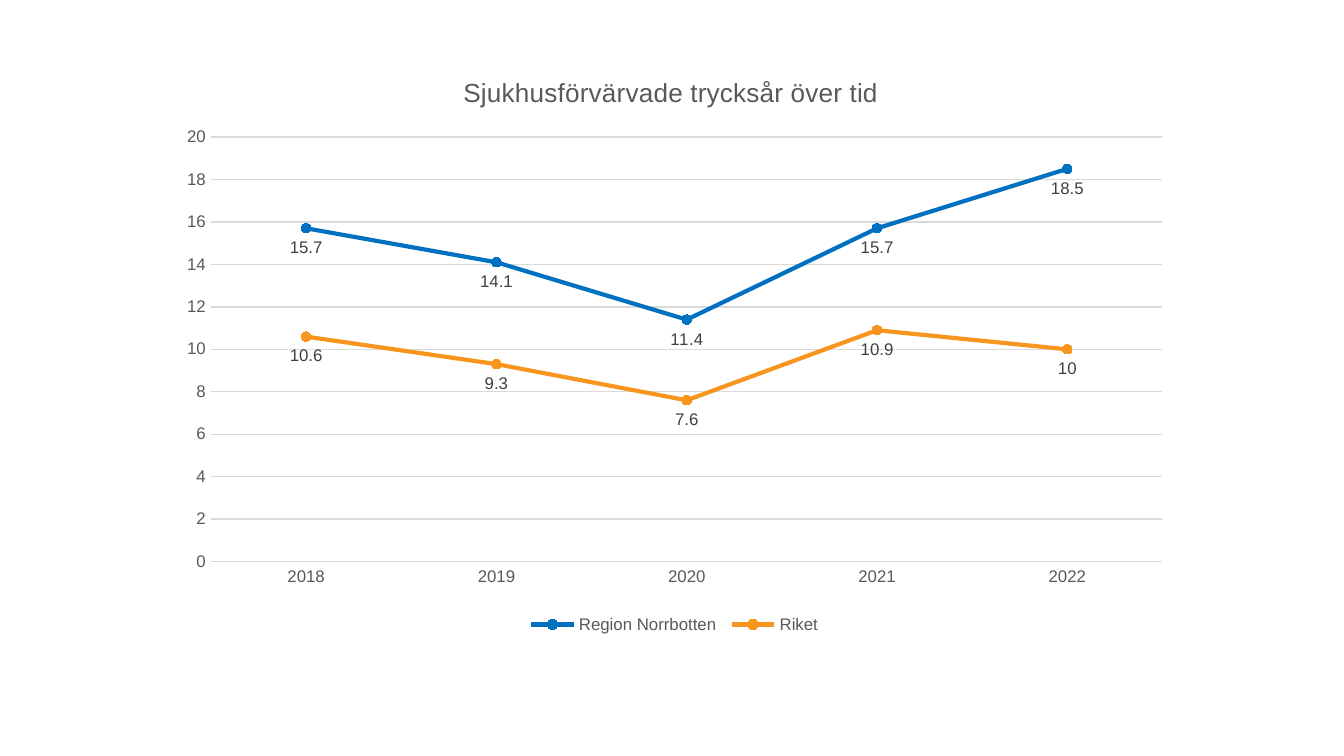
"""Build a slide with a line chart of hospital-acquired pressure ulcers over time."""
from lxml.etree import SubElement
from pptx import Presentation
from pptx.chart.data import CategoryChartData
from pptx.dml.color import RGBColor
from pptx.enum.chart import (XL_CHART_TYPE, XL_LABEL_POSITION, XL_LEGEND_POSITION,
                             XL_MARKER_STYLE, XL_TICK_MARK)
from pptx.oxml.ns import qn
from pptx.util import Inches, Pt

TITLE = "Sjukhusförvärvade trycksår över tid "
YEARS = ["2018", "2019", "2020", "2021", "2022"]
SERIES = [
    ("Region Norrbotten ", "region", (15.7, 14.1, 11.4, 15.7, 18.5)),
    ("Riket", "country", (10.6, 9.3, 7.6, 10.9, 10)),
]
COLORS = {"region": "0070C0", "country": "F8951F", "text": "595959",
          "label": "404040", "grid": "D9D9D9"}
CHART_BOX = (1.24, 0.39, 7.56, 4.37)
PLOT_BOX = (1.57, 1.02, 7.08, 3.16)


def color(name):
    return RGBColor.from_string(COLORS[name])


def style_font(font, size, color_name):
    font.name = "Arial"
    font.size = Pt(size)
    font.bold = False
    font.color.rgb = color(color_name)


def style_line(line, color_name, width):
    line.color.rgb = color(color_name)
    line.width = Pt(width)


def add_title(chart):
    frame = chart.chart_title.text_frame
    run = frame.paragraphs[0].add_run()
    run.text = TITLE
    style_font(run.font, 14, "text")
    chart.chart_title.include_in_layout = False


def style_axes(chart):
    for axis in (chart.category_axis, chart.value_axis):
        axis.major_tick_mark = axis.minor_tick_mark = XL_TICK_MARK.NONE
        style_font(axis.tick_labels.font, 9, "text")
    style_line(chart.category_axis.format.line, "grid", 0.75)
    values = chart.value_axis
    values.minimum_scale, values.maximum_scale, values.major_unit = 0, 20, 2
    values.format.line.fill.background()
    style_line(values.major_gridlines.format.line, "grid", 0.75)


def style_series(series, color_name):
    series.smooth = False
    style_line(series.format.line, color_name, 2.25)
    marker = series.marker
    marker.style = XL_MARKER_STYLE.CIRCLE
    marker.size = 5
    marker.format.fill.solid()
    marker.format.fill.fore_color.rgb = color(color_name)
    style_line(marker.format.line, color_name, 0.75)
    labels = series.data_labels
    labels.show_value = True
    labels.position = XL_LABEL_POSITION.BELOW
    style_font(labels.font, 9, "label")


def place_plot(chart):
    left, top, width, height = CHART_BOX
    plot_left, plot_top, plot_width, plot_height = PLOT_BOX
    settings = {"layoutTarget": "inner", "xMode": "edge", "yMode": "edge",
                "x": (plot_left - left) / width, "y": (plot_top - top) / height,
                "w": plot_width / width, "h": plot_height / height}
    plot_area = chart.plots[0]._element.getparent()
    for old_layout in plot_area.findall(qn("c:layout")):
        plot_area.remove(old_layout)
    layout = SubElement(plot_area, qn("c:layout"))
    plot_area.insert(0, layout)
    manual = SubElement(layout, qn("c:manualLayout"))
    for tag, value in settings.items():
        SubElement(manual, qn(f"c:{tag}")).set("val", str(value))


def main():
    presentation = Presentation()
    presentation.slide_width = Inches(10)
    presentation.slide_height = Inches(10 * 9 / 16)
    slide = presentation.slides.add_slide(presentation.slide_layouts[6])

    data = CategoryChartData()
    data.categories = YEARS
    for name, _, values in SERIES:
        data.add_series(name, values)
    box = [Inches(length) for length in CHART_BOX]
    chart = slide.shapes.add_chart(XL_CHART_TYPE.LINE_MARKERS, *box, data).chart
    chart.font.name = "Arial"
    chart.font.size = Pt(10)
    add_title(chart)
    style_axes(chart)
    chart.plots[0].vary_by_categories = False
    for series, (_, color_name, _) in zip(chart.plots[0].series, SERIES):
        style_series(series, color_name)
    chart.has_legend = True
    chart.legend.position = XL_LEGEND_POSITION.BOTTOM
    chart.legend.include_in_layout = False
    style_font(chart.legend.font, 9, "text")
    place_plot(chart)

    presentation.save("out.pptx")


if __name__ == "__main__":
    main()
